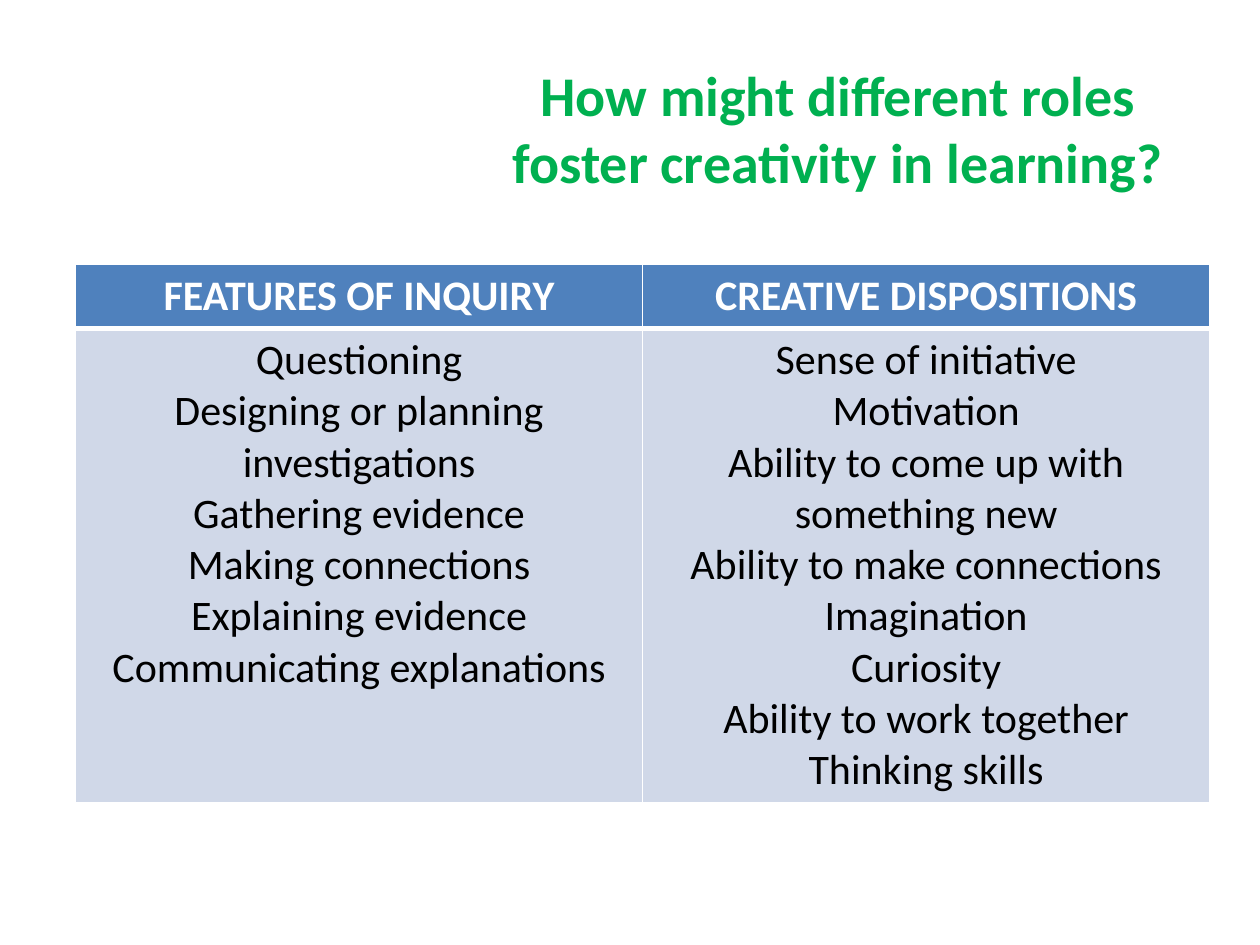
from dataclasses import dataclass

from pptx import Presentation
from pptx import util as u
from pptx.dml.color import RGBColor
from pptx.enum import text
from pptx.oxml.ns import qn
from lxml import etree


@dataclass(frozen=True)
class Theme:
    font: str = "Calibri"
    title_size: int = 32
    table_size: int = 24
    green: str = "00B050"
    blue: str = "4F81BD"
    pale: str = "D0D8E8"
    white: str = "FFFFFF"
    black: str = "000000"


THEME = Theme()
WIDTH, HEIGHT = 10, 7.5
TITLE_SHARES = (0.38, 0.04, 0.57, 0.19)
TABLE_SHARES = (0.06, 0.28, 0.9, 0.56)
HEADER_HEIGHT = 0.48
THIN, THICK = 1, 3

COLUMNS = {
    "FEATURES OF INQUIRY": [
        "Questioning",
        "Designing or planning investigations",
        "Gathering evidence",
        "Making connections",
        "Explaining evidence",
        "Communicating explanations",
    ],
    "CREATIVE DISPOSITIONS": [
        "Sense of initiative",
        "Motivation",
        "Ability to come up with something new",
        "Ability to make connections",
        "Imagination",
        "Curiosity",
        "Ability to work together",
        "Thinking skills",
    ],
}


def place(shares):
    """Turn shares of the slide into left, top, width and height."""
    return [u.Inches(share * side)
            for share, side in zip(shares, (WIDTH, HEIGHT) * 2)]


def write_lines(frame, lines, size, color, bold):
    """Write one centred paragraph for each line."""
    frame.text = "\n".join(lines)
    values = {"name": THEME.font, "size": u.Pt(size), "bold": bold}
    for para in frame.paragraphs:
        para.alignment = text.PP_ALIGN.CENTER
        for span in para.runs:
            for name, value in values.items():
                setattr(span.font, name, value)
            span.font.color.rgb = RGBColor.from_string(color)


def add_borders(cell, **widths):
    """Draw white cell borders, with widths in points."""
    properties = cell._tc.get_or_add_tcPr()
    for side in "LRTB":
        width = u.Pt(widths.get(side, THIN))
        line = etree.SubElement(properties, qn(f"a:ln{side}"), w=str(width))
        fill = etree.SubElement(line, qn("a:solidFill"))
        etree.SubElement(fill, qn("a:srgbClr"), val=THEME.white)


def fill_cell(cell, lines, fill, color, bold, **widths):
    add_borders(cell, **widths)
    cell.fill.solid()
    cell.fill.fore_color.rgb = RGBColor.from_string(fill)
    write_lines(cell.text_frame, lines, THEME.table_size, color, bold)


def add_title(page, wording):
    title = page.shapes.title
    title.left, title.top, title.width, title.height = place(TITLE_SHARES)
    title.text_frame.vertical_anchor = text.MSO_ANCHOR.MIDDLE
    write_lines(title.text_frame, [wording], THEME.title_size, THEME.green, True)


def add_columns_table(page, columns):
    """Add a table with one header and one list in each column."""
    frame = page.shapes.add_table(2, len(columns), *place(TABLE_SHARES))
    table = frame.table
    header, body = table.rows
    header.height = u.Inches(HEADER_HEIGHT)
    body.height = u.Inches(TABLE_SHARES[3] * HEIGHT - HEADER_HEIGHT)
    for index, (heading, items) in enumerate(columns.items()):
        fill_cell(table.cell(0, index), [heading], THEME.blue, THEME.white,
                  True, B=THICK)
        fill_cell(table.cell(1, index), items, THEME.pale, THEME.black,
                  False, T=THICK)


def main():
    deck = Presentation()
    deck.slide_width, deck.slide_height = u.Inches(WIDTH), u.Inches(HEIGHT)
    page = deck.slides.add_slide(deck.slide_layouts.get_by_name("Title Only"))

    # Question at the top right
    add_title(page, "How might different roles foster creativity in learning?")

    # Inquiry features beside creative dispositions
    add_columns_table(page, COLUMNS)

    deck.save("out.pptx")


if __name__ == "__main__":
    main()
